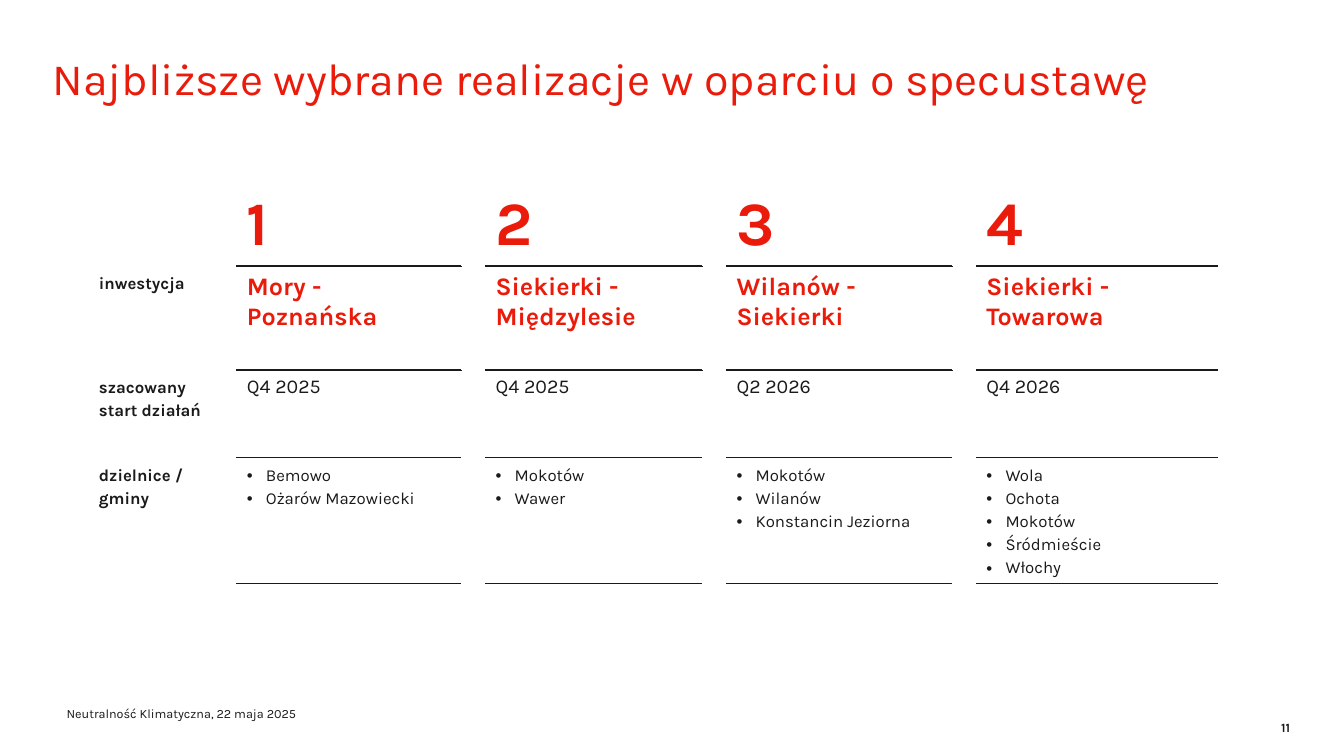
"""Builds the slide on the nearest selected investments."""
import pptx
import pptx.dml.color
import pptx.enum.text
import pptx.oxml
import pptx.oxml.ns
import pptx.util
from pptx.util import Cm, Pt

RED = pptx.dml.color.RGBColor(0xEA, 0x1B, 0x0A)
INK = pptx.dml.color.RGBColor(0x1A, 0x1A, 0x1A)
ANCHOR = pptx.enum.text.MSO_ANCHOR
ALIGN = pptx.enum.text.PP_ALIGN
NAMESPACE = pptx.oxml.ns.nsdecls("a")


def add_text(paragraph, text, size, color=INK, bold=False):
    run = paragraph.add_run()
    run.text = text
    run.font.name = "Karla"
    run.font.size = Pt(size)
    run.font.bold = bold
    run.font.color.rgb = color


def clear_margins(frame):
    frame.margin_left = frame.margin_top = frame.margin_right = frame.margin_bottom = 0


presentation = pptx.Presentation()
presentation.slide_width = Cm(33.87)
presentation.slide_height = Cm(19.05)
slide = presentation.slides.add_slide(presentation.slide_layouts[5])

title = slide.shapes.title
title.left, title.top, title.width, title.height = Cm(1.32), Cm(1.42), Cm(31.19), Cm(2.46)
clear_margins(title.text_frame)
title.text_frame.auto_size = pptx.enum.text.MSO_AUTO_SIZE.NONE
title.text_frame.vertical_anchor = ANCHOR.TOP
heading = title.text_frame.paragraphs[0]
heading.alignment = ALIGN.LEFT
heading.line_spacing = 0.9
add_text(heading, "Najbliższe wybrane realizacje w oparciu o specustawę", 32, RED)

labels = ["", "inwestycja", "szacowany start działań", "dzielnice / gminy"]
investments = [
    ("1", "Mory - Poznańska", "Q4 2025", ["Bemowo", "Ożarów Mazowiecki"]),
    ("2", "Siekierki - Międzylesie", "Q4 2025", ["Mokotów", "Wawer"]),
    ("3", "Wilanów - Siekierki", "Q2 2026", ["Mokotów", "Wilanów", "Konstancin Jeziorna"]),
    ("4", "Siekierki - Towarowa", "Q4 2026",
     ["Wola", "Ochota", "Mokotów", "Śródmieście", "Włochy"]),
]
column_widths = [3.12, 0.58, 5.66, 0.61, 5.46, 0.61, 5.69, 0.58, 6.07]
row_heights = [2.31, 2.62, 2.21, 3.11]
row_styles = [(44, RED, True, 52.5), (18, RED, True, 21.8),
              (14, INK, False, 16.5), (12, INK, False, 16.5)]

table = slide.shapes.add_table(
    len(row_heights), len(column_widths), Cm(2.24), Cm(4.39),
    Cm(sum(column_widths)), Cm(sum(row_heights))).table
table.first_row = False
table.horz_banding = False
for column, width in zip(table.columns, column_widths):
    column.width = Cm(width)
for row, height in zip(table.rows, row_heights):
    row.height = Cm(height)

for row_index, label in enumerate(labels):
    if label:
        paragraph = table.cell(row_index, 0).text_frame.paragraphs[0]
        paragraph.line_spacing = Pt(16.5)
        add_text(paragraph, label, 12, bold=True)

for investment_index, investment in enumerate(investments):
    for row_index, (content, style) in enumerate(zip(investment, row_styles)):
        size, color, bold, spacing = style
        cell = table.cell(row_index, 2 + 2 * investment_index)
        if row_index == 0:
            cell.vertical_anchor = ANCHOR.BOTTOM
        bulleted = isinstance(content, list)
        for item_index, item in enumerate(content if bulleted else [content]):
            frame = cell.text_frame
            paragraph = frame.add_paragraph() if item_index else frame.paragraphs[0]
            paragraph.line_spacing = Pt(spacing)
            if bulleted:
                properties = paragraph._p.get_or_add_pPr()
                properties.set("marL", str(Cm(0.48)))
                properties.set("indent", str(-Cm(0.48)))
                properties.append(pptx.oxml.parse_xml(
                    f'<a:buFont {NAMESPACE} typeface="Arial"/>'))
                properties.append(pptx.oxml.parse_xml(f'<a:buChar {NAMESPACE} char="•"/>'))
            add_text(paragraph, item, size, color, bold)
        for side in ["lnT", "lnB"] if row_index else ["lnB"]:
            cell._tc.get_or_add_tcPr().append(pptx.oxml.parse_xml(
                f'<a:{side} {NAMESPACE} w="{Pt(1.08)}"><a:solidFill>'
                f'<a:srgbClr val="{INK}"/></a:solidFill></a:{side}>'))

for cell in table.iter_cells():
    cell.fill.background()

small_texts = [
    ("11", 31.52, 18.14, 0.99, ALIGN.RIGHT, True),
    ("Neutralność Klimatyczna, 22 maja 2025", 1.68, 17.78, 15.09, ALIGN.LEFT, False),
]
for text, left, top, width, alignment, bold in small_texts:
    box = slide.shapes.add_textbox(Cm(left), Cm(top), Cm(width), Cm(0.38))
    clear_margins(box.text_frame)
    box.text_frame.word_wrap = True
    paragraph = box.text_frame.paragraphs[0]
    paragraph.alignment = alignment
    add_text(paragraph, text, 9, bold=bold)

presentation.save("out.pptx")
